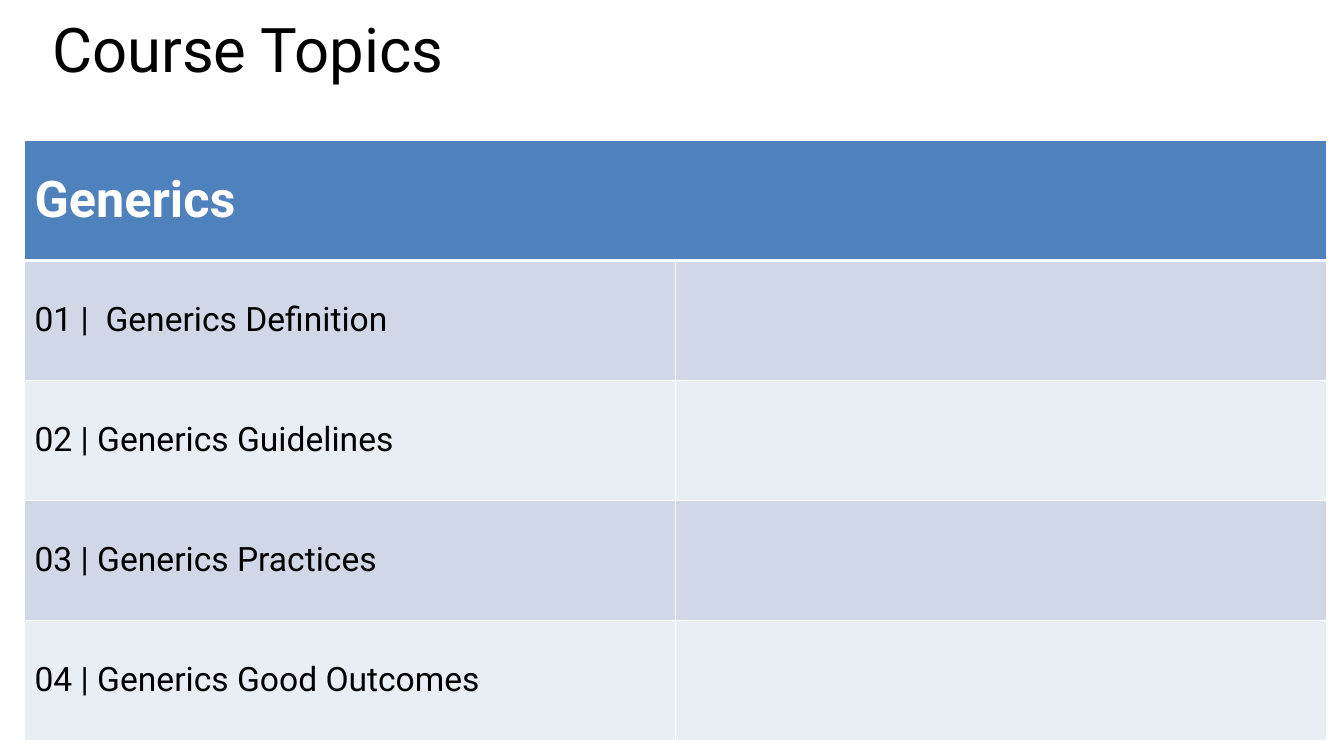
from lxml.etree import SubElement
from pptx import Presentation
from pptx.dml.color import RGBColor
from pptx.enum.text import MSO_ANCHOR
from pptx.oxml.ns import qn
from pptx.util import Pt

FONT = "Roboto"
WHITE = "FFFFFF"
BLACK = "000000"
HEADER_FILL = "4F81BD"
BAND_FILLS = ("D0D8E8", "E9EDF4")
TOPICS = (
    "01 |  Generics Definition",
    "02 | Generics Guidelines",
    "03 | Generics Practices",
    "04 | Generics Good Outcomes",
)


def color(value):
    return RGBColor.from_string(value)


def style_paragraph(paragraph, size, font_color, bold=False):
    paragraph.font.name = FONT
    paragraph.font.size = Pt(size)
    paragraph.font.bold = bold
    paragraph.font.color.rgb = color(font_color)


def add_title(slide, text):
    title = slide.shapes.add_textbox(Pt(30.24), Pt(14.4), Pt(907.2), Pt(83.52))
    title.text_frame.word_wrap = True
    paragraph = title.text_frame.paragraphs[0]
    paragraph.text = text
    paragraph.line_spacing = 0.8
    style_paragraph(paragraph, 44, BLACK)


def set_borders(cell, top, bottom):
    properties = cell._tc.get_or_add_tcPr()
    widths = {"a:lnL": 1, "a:lnR": 1, "a:lnT": top, "a:lnB": bottom}
    for tag, width in widths.items():
        line = SubElement(properties, qn(tag), w=str(Pt(width)))
        fill = SubElement(line, qn("a:solidFill"))
        SubElement(fill, qn("a:srgbClr"), val=WHITE)


def style_cell(cell, fill, top=1, bottom=1):
    set_borders(cell, top, bottom)
    cell.fill.solid()
    cell.fill.fore_color.rgb = color(fill)
    cell.vertical_anchor = MSO_ANCHOR.MIDDLE


def write_cell(cell, text, size, font_color, bold=False):
    cell.text = text
    style_paragraph(cell.text_frame.paragraphs[0], size, font_color, bold)


def add_topic_table(slide, heading, topics):
    frame = slide.shapes.add_table(
        len(topics) + 1, 2, Pt(17.5), Pt(100.3), Pt(930), Pt(428.5)
    )
    table = frame.table
    for cell in table.rows[0].cells:
        style_cell(cell, HEADER_FILL, bottom=3)
    table.cell(0, 0).merge(table.cell(0, 1))
    write_cell(table.cell(0, 0), heading, 36, WHITE, bold=True)
    for row, topic in enumerate(topics, start=1):
        for cell in table.rows[row].cells:
            style_cell(cell, BAND_FILLS[(row - 1) % 2], top=3 if row == 1 else 1)
        write_cell(table.cell(row, 0), topic, 24, BLACK)


def main():
    presentation = Presentation()
    presentation.slide_width = Pt(960)
    presentation.slide_height = Pt(540)
    slide = presentation.slides.add_slide(presentation.slide_layouts[6])
    add_title(slide, "Course Topics")
    add_topic_table(slide, "Generics", TOPICS)
    presentation.save("out.pptx")


if __name__ == "__main__":
    main()
